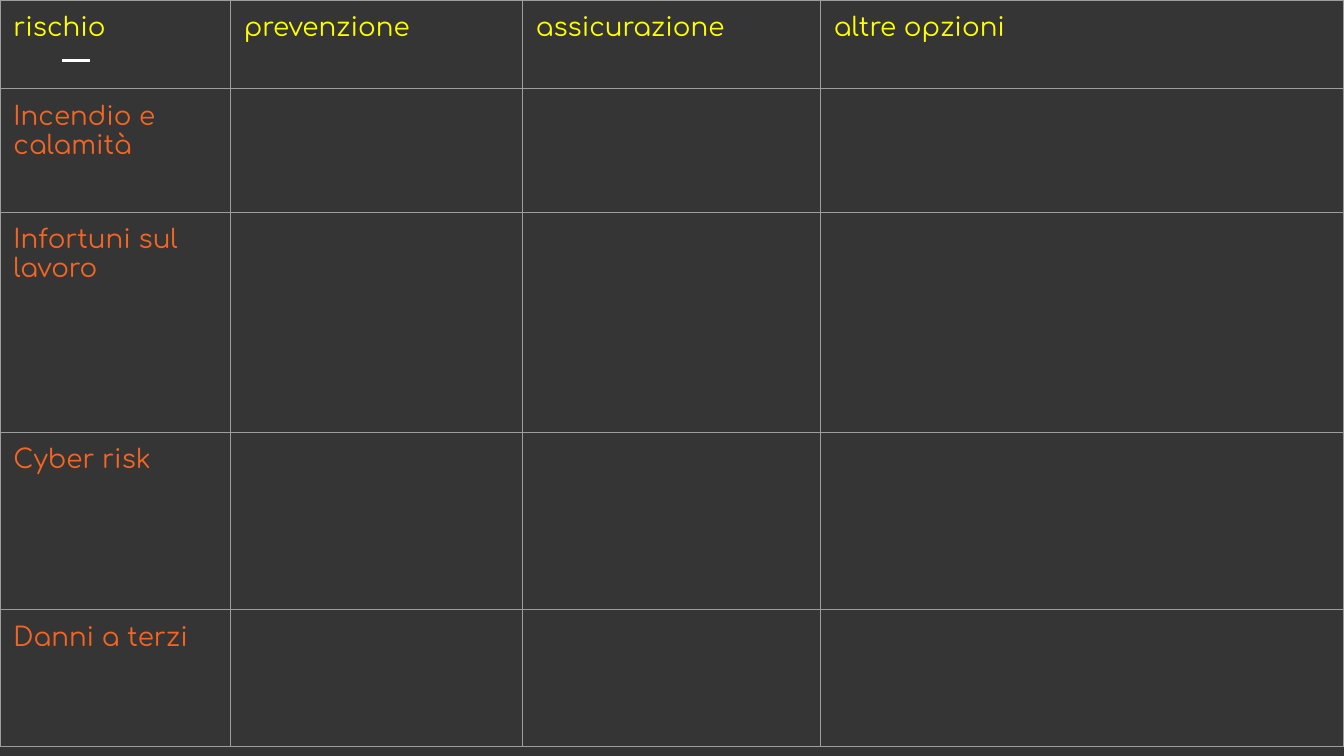
from lxml.etree import SubElement
from pptx import Presentation
from pptx.dml.color import RGBColor
from pptx.enum.shapes import MSO_CONNECTOR as Connector
from pptx.oxml import parse_xml
from pptx.oxml.ns import nsdecls, qn
from pptx.util import Pt

CHARCOAL = RGBColor(0x35, 0x35, 0x35)
WHITE = RGBColor(0xFF, 0xFF, 0xFF)
GREY = RGBColor(0x9E, 0x9E, 0x9E)
YELLOW = RGBColor(0xFF, 0xFF, 0x00)
ORANGE = RGBColor(0xF4, 0x65, 0x24)

HEADINGS = ["rischio", "prevenzione", "assicurazione", "altre opzioni"]
RISKS = ["Incendio e calamità", "Infortuni sul lavoro", "Cyber risk", "Danni a terzi"]
COLUMN_WIDTHS = [123.5, 156.4, 159.7, 280.4]
ROW_HEIGHTS = [47.5, 66.2, 118, 95, 73.5]


def write(frame, text, *, font="Comfortaa", size=14, color=WHITE):
    run = frame.paragraphs[0].add_run()
    run.text = text
    run.font.name = font
    run.font.size = Pt(size)
    run.font.color.rgb = color


class RiskSlide:
    border_width = 0.75
    cell_margin = 7.2

    def __init__(self, deck):
        self.slide = deck.slides.add_slide(deck.slide_layouts[6])
        fill = self.slide.background.fill
        fill.solid()
        fill.fore_color.rgb = CHARCOAL

    def line(self, x1, y1, x2, y2, color=WHITE, width=1.5):
        rule = self.slide.shapes.add_connector(
            Connector.STRAIGHT, Pt(x1), Pt(y1), Pt(x2), Pt(y2))
        rule.line.color.rgb = color
        rule.line.width = Pt(width)
        SubElement(rule._element.spPr, qn("a:effectLst"))

    def grid(self, left, top, widths, heights):
        matrix = self.slide.shapes.add_table(
            len(heights), len(widths), Pt(left), Pt(top),
            Pt(sum(widths)), Pt(sum(heights))).table
        matrix.first_row = matrix.horz_banding = False
        for column, width in zip(matrix.columns, widths):
            column.width = Pt(width)
        for row, height in zip(matrix.rows, heights):
            row.height = Pt(height)
        for cell in matrix.iter_cells():
            self.style_cell(cell)
        return matrix

    def style_cell(self, cell):
        cell.fill.background()
        margin = Pt(self.cell_margin)
        cell.margin_left = cell.margin_right = margin
        cell.margin_top = cell.margin_bottom = margin
        properties = cell._tc.get_or_add_tcPr()
        # Borders must come before the fill, in this order
        for position, side in enumerate("LRTB"):
            properties.insert(position, parse_xml(
                f'<a:ln{side} {nsdecls("a")} w="{Pt(self.border_width)}">'
                f'<a:solidFill><a:srgbClr val="{GREY}"/></a:solidFill></a:ln{side}>'))


def main():
    deck = Presentation()
    deck.slide_width, deck.slide_height = Pt(720), Pt(405)
    page = RiskSlide(deck)

    # Accent dash behind the table
    page.line(33.5, 32.5, 48, 32.5)

    # Risk matrix: headings across, risks down
    matrix = page.grid(0, 0, COLUMN_WIDTHS, ROW_HEIGHTS)
    for column, heading in enumerate(HEADINGS):
        write(matrix.cell(0, column).text_frame, heading, color=YELLOW)
    for row, risk in enumerate(RISKS, start=1):
        write(matrix.cell(row, 0).text_frame, risk, color=ORANGE)

    deck.save("out.pptx")


if __name__ == "__main__":
    main()
